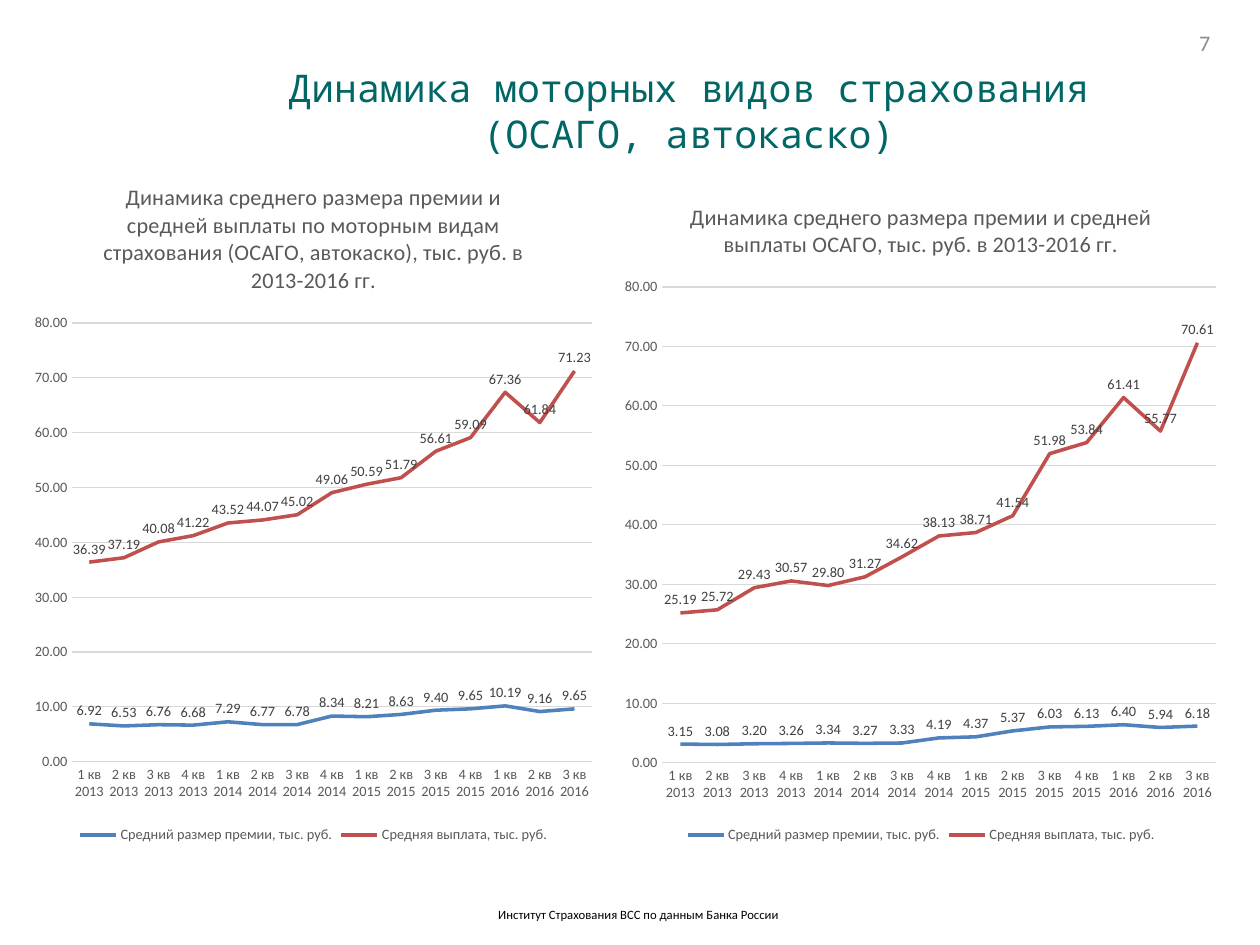
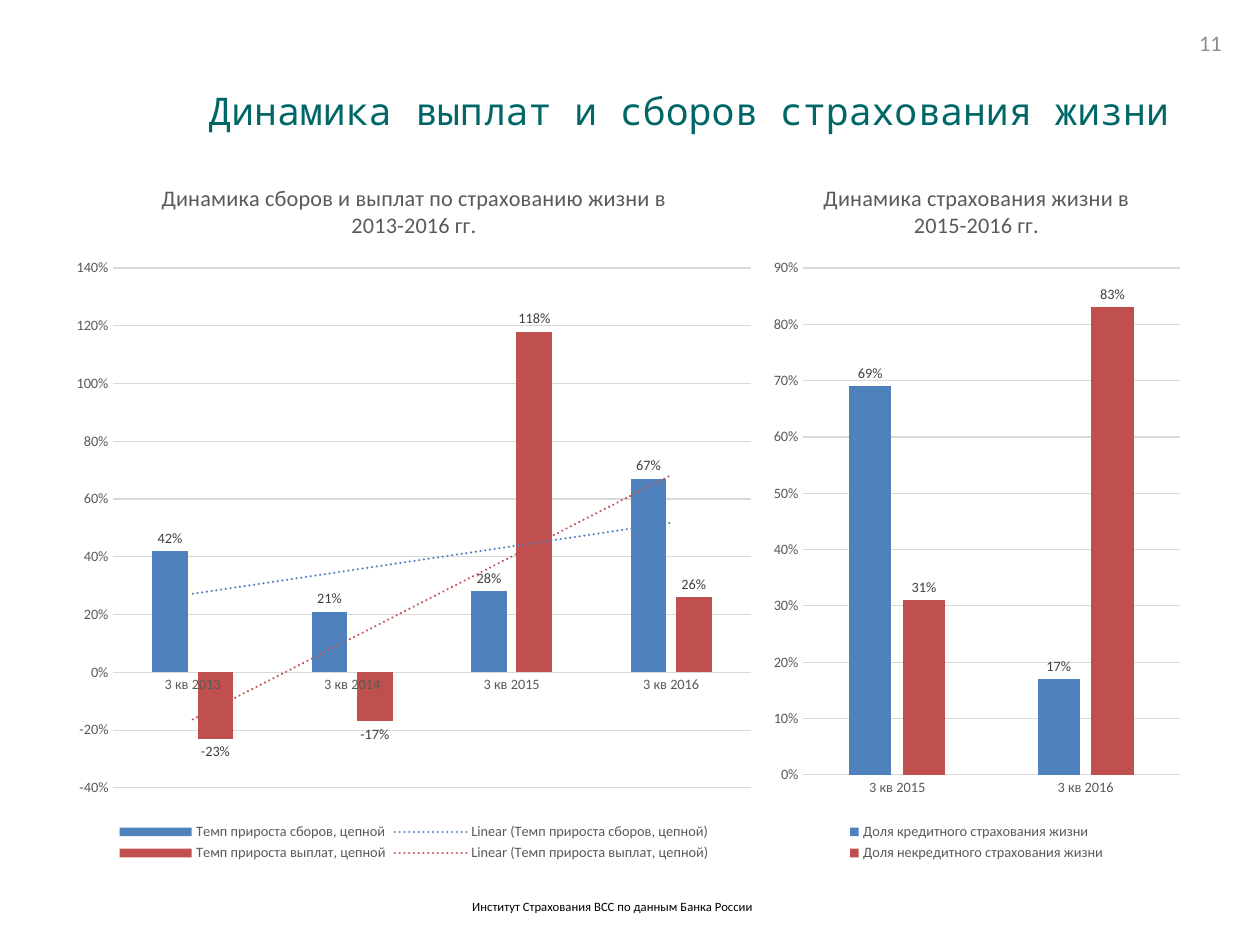
from pptx import Presentation
from pptx.chart.data import CategoryChartData
from pptx.dml.color import RGBColor
from pptx.enum.chart import XL_CHART_TYPE, XL_LABEL_POSITION, XL_LEGEND_POSITION, XL_TICK_MARK
from pptx.enum.text import MSO_ANCHOR, MSO_AUTO_SIZE, PP_ALIGN
from pptx.oxml import parse_xml
from pptx.oxml.ns import nsdecls, qn
from pptx.util import Pt

LINE = XL_CHART_TYPE.LINE
COLUMN = XL_CHART_TYPE.COLUMN_CLUSTERED
ABOVE = XL_LABEL_POSITION.ABOVE
OUTSIDE = XL_LABEL_POSITION.OUTSIDE_END
BOTTOM = XL_LEGEND_POSITION.BOTTOM
NO_TICK = XL_TICK_MARK.NONE
TOP, MIDDLE = MSO_ANCHOR.TOP, MSO_ANCHOR.MIDDLE
FIXED, GROW = MSO_AUTO_SIZE.NONE, MSO_AUTO_SIZE.SHAPE_TO_FIT_TEXT
CENTER = PP_ALIGN.CENTER

PX = 8000
WIDTH, HEIGHT = 1260, 945
TITLE_BOX = (189, 31, 999, 158)
NUMBER_BOX = (1188, 18, 72, 50)
BODY_FONT, TITLE_FONT = "Calibri", "Noto Sans Mono"
COLORS = {
    "title": "006666", "number": "8C8C8C", "source": "000000",
    "axis": "595959", "grid": "D9D9D9", "label": "404040",
    "first": "4F81BD", "second": "C0504D",
}
SERIES_COLORS = ("first", "second")

SOURCE = "Институт Страхования ВСС по данным Банка России"
QUARTERS = [f"{q} кв {y}" for y in range(2013, 2017) for q in range(1, 5)][:15]
PREMIUM, PAYOUT = "Средний размер премии, тыс. руб.", "Средняя выплата, тыс. руб."
MONEY = {"kind": LINE, "format": "#,##0.00", "scale": (0, 80, 10), "cats": QUARTERS}
SHARE = {"kind": COLUMN, "format": "0%"}

SLIDES = [
    {
        "title": "Динамика моторных видов страхования (ОСАГО, автокаско)",
        "number": "7",
        "source_box": (487, 901, 324, 27),
        "charts": [
            {
                **MONEY,
                "title": "Динамика среднего размера премии и средней выплаты по моторным видам "
                         "страхования (ОСАГО, автокаско), тыс. руб. в 2013-2016 гг.",
                "box": (23, 158, 581, 690),
                "plot": (72, 323, 520, 439),
                "series": {
                    PREMIUM: (6.92, 6.53, 6.76, 6.68, 7.29, 6.77, 6.78, 8.34,
                              8.21, 8.63, 9.4, 9.65, 10.19, 9.16, 9.65),
                    PAYOUT: (36.39, 37.19, 40.08, 41.22, 43.52, 44.07, 45.02, 49.06,
                             50.59, 51.79, 56.61, 59.09, 67.36, 61.84, 71.23),
                },
            },
            {
                **MONEY,
                "title": "Динамика среднего размера премии и средней выплаты ОСАГО, "
                         "тыс. руб. в 2013-2016 гг.",
                "box": (613, 178, 616, 670),
                "plot": (662, 287, 554, 476),
                "series": {
                    PREMIUM: (3.15, 3.08, 3.2, 3.26, 3.34, 3.27, 3.33, 4.19,
                              4.37, 5.37, 6.03, 6.13, 6.4, 5.94, 6.18),
                    PAYOUT: (25.19, 25.72, 29.43, 30.57, 29.8, 31.27, 34.62, 38.13,
                             38.71, 41.54, 51.98, 53.84, 61.41, 55.77, 70.61),
                },
            },
        ],
    },
    {
        "title": "Динамика выплат и сборов страхования жизни",
        "number": "11",
        "source_box": (461, 893, 324, 27),
        "charts": [
            {
                **SHARE,
                "title": "Динамика сборов и выплат по страхованию жизни в 2013-2016 гг.",
                "box": (63, 158, 702, 708),
                "plot": (113, 268, 638, 520),
                "scale": (-0.4, 1.4, 0.2),
                "trend": True,
                "cats": QUARTERS[2::4],
                "series": {
                    "Темп прироста сборов, цепной": (0.42, 0.21, 0.28, 0.67),
                    "Темп прироста выплат, цепной": (-0.23, -0.17, 1.18, 0.26),
                },
            },
            {
                **SHARE,
                "title": "Динамика страхования жизни в 2015-2016 гг.",
                "box": (765, 158, 423, 708),
                "plot": (803, 268, 377, 507),
                "scale": (0, 0.9, 0.1),
                "cats": QUARTERS[10::4],
                "series": {
                    "Доля кредитного страхования жизни": (0.69, 0.17),
                    "Доля некредитного страхования жизни": (0.31, 0.83),
                },
            },
        ],
    },
]


def emu(box):
    return [v * PX for v in box]


def rgb(name):
    return RGBColor.from_string(COLORS[name])


def style(font, size, color, face=BODY_FONT):
    font.size = Pt(size)
    font.name = face
    font.bold = False
    font.color.rgb = rgb(color)


def write(tf, text, size, color, face=BODY_FONT, align=None, anchor=None, fit=None):
    tf.text = text
    if anchor is not None:
        tf.word_wrap = True
        tf.vertical_anchor = anchor
        tf.auto_size = fit
    p = tf.paragraphs[0]
    p.alignment = align
    style(p.runs[0].font, size, color, face)


def add_text(s, box, text, **fmt):
    write(s.shapes.add_textbox(*emu(box)).text_frame, text, **fmt)


def set_line(line, color, width):
    line.color.rgb = rgb(color)
    line.width = Pt(width)


def place_plot(chart, box, plot):
    left, top, width, height = box
    x, y, w, h = plot
    parts = {"x": (x - left) / width, "y": (y - top) / height, "w": w / width, "h": h / height}
    values = "".join(f'<c:{k} val="{v:.4f}"/>' for k, v in parts.items())
    area = chart.element.find(f".//{qn('c:plotArea')}")
    for old in area.findall(qn("c:layout")):
        area.remove(old)
    area.insert(0, parse_xml(
        f'<c:layout {nsdecls("c")}><c:manualLayout><c:layoutTarget val="inner"/>'
        f'<c:xMode val="edge"/><c:yMode val="edge"/>{values}</c:manualLayout></c:layout>'))


def add_trend(series, color):
    series._element.find(qn("c:cat")).addprevious(parse_xml(
        f'<c:trendline {nsdecls("c", "a")}><c:spPr><a:ln w="19050" cap="rnd"><a:solidFill>'
        f'<a:srgbClr val="{COLORS[color]}"/></a:solidFill><a:prstDash val="sysDot"/></a:ln></c:spPr>'
        '<c:trendlineType val="linear"/><c:dispRSqr val="0"/><c:dispEq val="0"/></c:trendline>'))


def style_axes(chart, scale, number_format):
    cat, val = chart.category_axis, chart.value_axis
    for axis in (cat, val):
        axis.major_tick_mark = axis.minor_tick_mark = NO_TICK
        style(axis.tick_labels.font, 9, "axis")
    set_line(cat.format.line, "grid", 0.75)
    val.format.line.fill.background()
    val.has_major_gridlines = True
    set_line(val.major_gridlines.format.line, "grid", 0.75)
    val.minimum_scale, val.maximum_scale, val.major_unit = scale
    val.tick_labels.number_format = number_format
    val.tick_labels.number_format_is_linked = False


def style_series(series, color, is_line, number_format):
    if is_line:
        series.smooth = False
        set_line(series.format.line, color, 2.25)
    else:
        series.invert_if_negative = False
        series.format.fill.solid()
        series.format.fill.fore_color.rgb = rgb(color)
    labels = series.data_labels
    labels.show_value = True
    labels.number_format = number_format
    labels.number_format_is_linked = False
    labels.position = ABOVE if is_line else OUTSIDE
    style(labels.font, 9, "label")


def add_chart(s, item):
    data = CategoryChartData(number_format=item["format"])
    data.categories = item["cats"]
    for name, values in item["series"].items():
        data.add_series(name, values)
    chart = s.shapes.add_chart(item["kind"], *emu(item["box"]), data).chart
    style(chart.font, 10, "source")
    chart.has_title = True
    write(chart.chart_title.text_frame, item["title"], 14, "axis")
    chart.has_legend = True
    chart.legend.position = BOTTOM
    chart.legend.include_in_layout = False
    style(chart.legend.font, 9, "axis")
    style_axes(chart, item["scale"], item["format"])
    plot = chart.plots[0]
    plot.vary_by_categories = False
    is_line = item["kind"] == LINE
    if not is_line:
        plot.gap_width, plot.overlap = 219, -27
    for series, color in zip(plot.series, SERIES_COLORS):
        style_series(series, color, is_line, item["format"])
        if item.get("trend"):
            add_trend(series, color)
    place_plot(chart, item["box"], item["plot"])


def build_slide(prs, layout, item):
    s = prs.slides.add_slide(layout)
    write(s.shapes.title.text_frame, item["title"], 24, "title", face=TITLE_FONT,
          align=CENTER, anchor=MIDDLE, fit=FIXED)
    add_text(s, NUMBER_BOX, item["number"], size=14, color="number", anchor=MIDDLE, fit=FIXED)
    add_text(s, item["source_box"], SOURCE, size=8, color="source", anchor=TOP, fit=GROW)
    for chart in item["charts"]:
        add_chart(s, chart)


def main():
    prs = Presentation()
    prs.slide_width, prs.slide_height = WIDTH * PX, HEIGHT * PX
    layout = prs.slide_layouts[5]
    title = layout.placeholders[0]
    title.left, title.top, title.width, title.height = emu(TITLE_BOX)
    for item in SLIDES:
        build_slide(prs, layout, item)
    prs.save("out.pptx")


if __name__ == "__main__":
    main()
